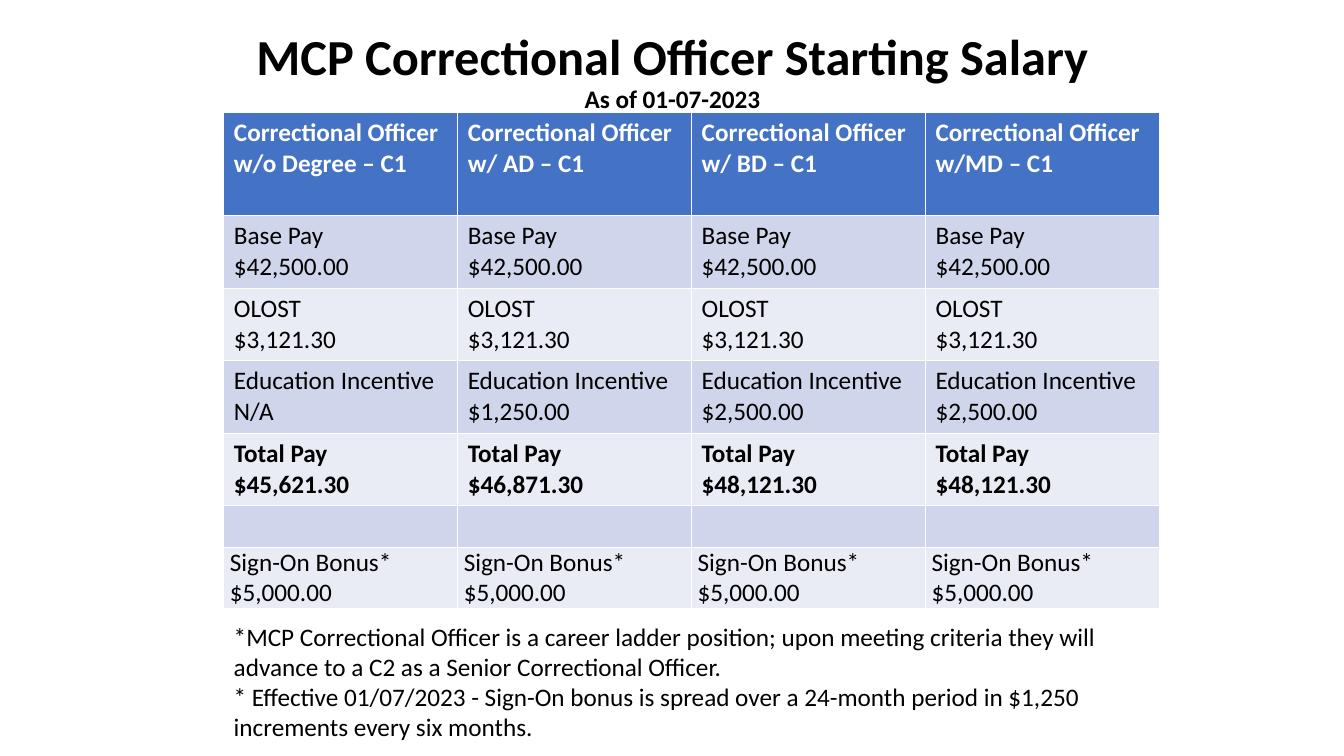
from lxml import etree
from pptx import Presentation
from pptx import util as u
from pptx.dml.color import RGBColor
from pptx.enum import text
from pptx.oxml import ns

BLACK = RGBColor(0x00, 0x00, 0x00)
WHITE = RGBColor(0xFF, 0xFF, 0xFF)
HEADER_BLUE = RGBColor(0x44, 0x72, 0xC4)
BANDS = (RGBColor(0xE9, 0xEB, 0xF5), RGBColor(0xCF, 0xD5, 0xEA))

ROW_HEIGHTS = [1.02, 0.72, 0.72, 0.72, 0.72, 0.41, 0.61]
COLUMN_WIDTH = 2.32
DEGREES = ["w/o Degree", "w/ AD", "w/ BD", "w/MD"]
PAY_ROWS = [
    ("Base Pay", ["$42,500.00"] * 4),
    ("OLOST", ["$3,121.30"] * 4),
    ("Education Incentive", ["N/A", "$1,250.00", "$2,500.00", "$2,500.00"]),
    ("Total Pay", ["$45,621.30", "$46,871.30", "$48,121.30", "$48,121.30"]),
    None,
    ("Sign-On Bonus*", ["$5,000.00"] * 4),
]
NOTES = [
    "*MCP Correctional Officer is a career ladder position; upon meeting criteria "
    "they will advance to a C2 as a Senior Correctional Officer.",
    "* Effective 01/07/2023 - Sign-On bonus is spread over a 24-month period "
    "in $1,250 increments every six months.",
]


def add_span(para, words, size=18, color=BLACK, bold=False, font="Calibri"):
    span = para.add_run()
    span.text = words
    span.font.name = font
    span.font.size = u.Pt(size)
    span.font.bold = bold
    span.font.color.rgb = color


class SalarySlide:
    def __init__(self, deck):
        self.slide = deck.slides.add_slide(deck.slide_layouts[5])

    def write_lines(self, frame, lines, **style):
        for index, line in enumerate(lines):
            para = frame.add_paragraph() if index else frame.paragraphs[0]
            add_span(para, line, **style)

    def place_title(self, heading, date, left, top, width, height):
        title = self.slide.shapes.title
        title.left, title.top = u.Inches(left), u.Inches(top)
        title.width, title.height = u.Inches(width), u.Inches(height)
        frame = title.text_frame
        frame.auto_size = text.MSO_AUTO_SIZE.NONE
        frame.vertical_anchor = text.MSO_ANCHOR.MIDDLE
        para = frame.paragraphs[0]
        para.alignment = text.PP_ALIGN.CENTER
        para.line_spacing = 0.9
        add_span(para, heading, size=36, bold=True)
        para.add_line_break()
        etree.SubElement(para._p[-1], ns.qn("a:rPr"), sz="3600")
        add_span(para, date, bold=True)

    def place_table(self, left, top):
        table = self.slide.shapes.add_table(
            len(ROW_HEIGHTS), len(DEGREES), u.Inches(left), u.Inches(top),
            u.Inches(COLUMN_WIDTH * len(DEGREES)), u.Inches(sum(ROW_HEIGHTS)),
        ).table
        for column in table.columns:
            column.width = u.Inches(COLUMN_WIDTH)
        for row, height in zip(table.rows, ROW_HEIGHTS):
            row.height = u.Inches(height)
        for column, degree in enumerate(DEGREES):
            header = f"Correctional Officer {degree} – C1"
            self.fill_cell(table.cell(0, column), HEADER_BLUE, [header],
                           color=WHITE, bold=True)
        for row, pay in enumerate(PAY_ROWS, 1):
            for column in range(len(DEGREES)):
                cell = table.cell(row, column)
                lines = [pay[0], pay[1][column]] if pay else []
                self.fill_cell(cell, BANDS[row % 2], lines,
                               bold=bool(pay) and pay[0] == "Total Pay")
                if row == len(PAY_ROWS):
                    cell.vertical_anchor = text.MSO_ANCHOR.MIDDLE
                    cell.margin_left = cell.margin_right = u.Inches(0.06)
                    cell.margin_top = cell.margin_bottom = 0

    def fill_cell(self, cell, fill, lines, **style):
        cell.fill.solid()
        cell.fill.fore_color.rgb = fill
        self.write_lines(cell.text_frame, lines, **style)

    def place_notes(self, lines, left, top, width, height):
        box = self.slide.shapes.add_textbox(
            u.Inches(left), u.Inches(top), u.Inches(width), u.Inches(height))
        box.text_frame.word_wrap = True
        box.text_frame.auto_size = text.MSO_AUTO_SIZE.SHAPE_TO_FIT_TEXT
        self.write_lines(box.text_frame, lines)


def main():
    deck = Presentation()
    deck.slide_width, deck.slide_height = u.Inches(13.33), u.Inches(7.5)
    page = SalarySlide(deck)
    page.place_title("MCP Correctional Officer Starting Salary",
                     "As of 01-07-2023", 0.92, 0, 11.5, 1.45)
    page.place_table(2.22, 1.12)
    page.place_notes(NOTES, 2.22, 6.11, 9.47, 1.31)
    deck.save("out.pptx")


if __name__ == "__main__":
    main()
